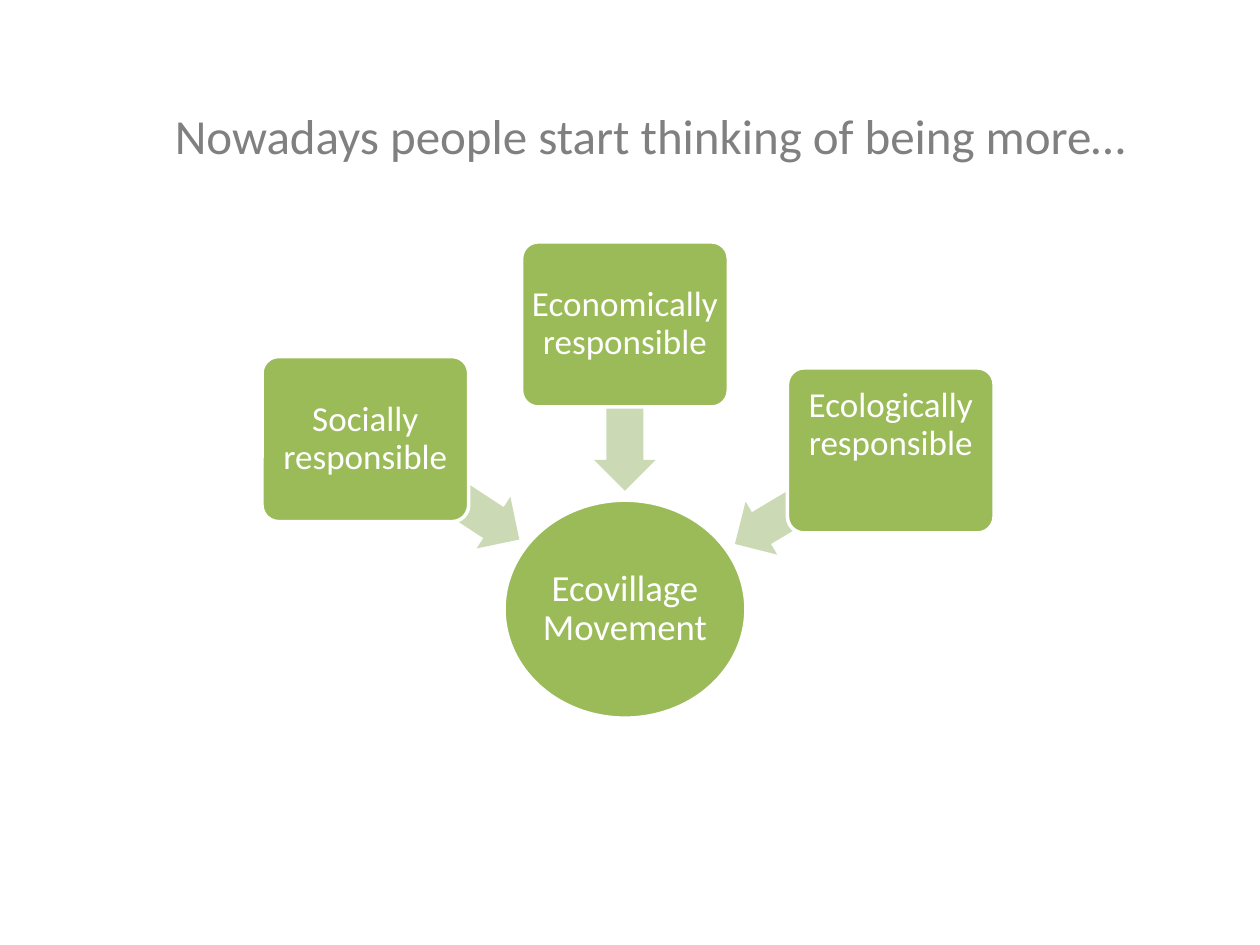
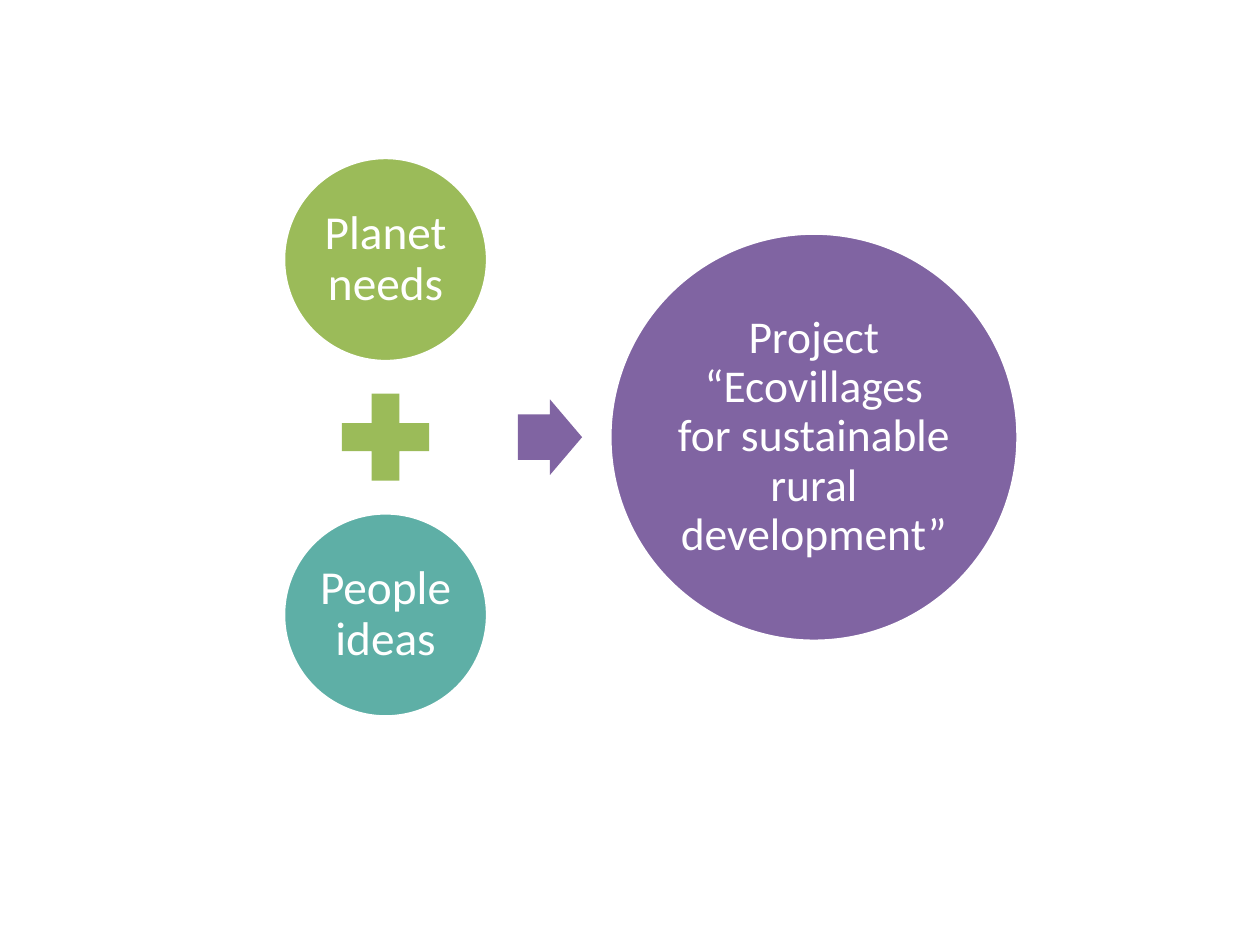
from pptx import Presentation
from pptx import util as u
from pptx.dml.color import RGBColor
from pptx.enum import shapes, text

# Shared scale, font and colours
PX = 9144  # 100 px to the inch
FONT = "Calibri"
GREEN, PALE, TEAL, PURPLE = "9BBB59", "CBDAB5", "5EAFA6", "8064A2"
WHITE, GREY = "FFFFFF", "808080"
KIND = shapes.MSO_SHAPE


def px(n):
    return u.Emu(round(n * PX))


def tint(code):
    return RGBColor.from_string(code)


def write(shape, words, size, color=WHITE, pad=4, low=None, lead=0.9):
    """Centred text; low is a bottom inset that lifts the words."""
    frame = shape.text_frame
    form = {
        "word_wrap": True,
        "vertical_anchor": text.MSO_ANCHOR.MIDDLE,
        "margin_left": px(pad),
        "margin_right": px(pad),
        "margin_top": px(pad),
        "margin_bottom": px(pad if low is None else low),
    }
    for name, value in form.items():
        setattr(frame, name, value)
    para = frame.paragraphs[0]
    para.text = words
    para.alignment = text.PP_ALIGN.CENTER
    para.line_spacing = lead
    for name, value in {"size": u.Pt(size), "name": FONT}.items():
        setattr(para.font, name, value)
    para.font.color.rgb = tint(color)


def draw(slide, kind, box, fill, edge=False, turn=0, adj=()):
    shape = slide.shapes.add_shape(kind, *map(px, box))
    shape.shadow.inherit = False
    shape.fill.solid()
    shape.fill.fore_color.rgb = tint(fill)
    if edge:
        shape.line.color.rgb = tint(WHITE)
        shape.line.width = u.Pt(2)
    else:
        shape.line.fill.background()
    shape.rotation = turn
    for i, value in enumerate(adj):
        shape.adjustments[i] = value
    return shape


def disc(slide, box, fill, words, size, pad=4):
    write(draw(slide, KIND.OVAL, box, fill, edge=True), words, size, pad=pad)


def card(slide, left, top, words, low):
    shape = draw(slide, KIND.ROUNDED_RECTANGLE, (left, top, 164, 131),
                 GREEN, edge=True, adj=(0.1,))
    write(shape, words, 20, pad=2, low=low)


def arrow(slide, kind, box, fill, turn=0):
    draw(slide, kind, box, fill, turn=turn, adj=(0.6, 0.5))


def title(slide, words):
    box = slide.shapes.add_textbox(*map(px, (66, 56, 900, 102)))
    write(box, words, 28, GREY, pad=10, low=5, lead=1)
    box.text_frame.margin_top = px(5)


def causes(slide):
    disc(slide, (400, 397, 192, 173), GREEN, "Ecovillage Movement", 21, pad=1)
    # Each arrow goes under its card: arrow box, turn, card corner, words, low inset
    rows = (
        ((279, 364, 145, 49), 213.2, (208, 283), "Socially responsible", 2),
        ((430, 299, 132, 49), 270, (414, 192), "Economically responsible", 2),
        ((573, 370, 145, 49), 329.1, (625, 292), "Ecologically responsible", 42),
    )
    for box, turn, spot, words, low in rows:
        arrow(slide, KIND.LEFT_ARROW, box, PALE, turn)
        card(slide, *spot, words, low)
    title(slide, "Nowadays people start thinking of being more…")


def project(slide):
    # Two parts of the sum
    parts = ((125, GREEN, "Planet needs"), (407, TEAL, "People ideas"))
    for top, fill, words in parts:
        disc(slide, (225, top, 162, 162), fill, words, 27)
    draw(slide, KIND.MATH_PLUS, (259, 300, 94, 94), GREEN)
    # Outcome
    arrow(slide, KIND.RIGHT_ARROW, (411, 317, 51, 60), PURPLE)
    disc(slide, (484, 185, 324, 324), PURPLE,
         "Project “Ecovillages for sustainable rural development”", 26)


def main():
    deck = Presentation()
    deck.slide_width, deck.slide_height = px(1000), px(750)
    for build in (causes, project):
        build(deck.slides.add_slide(deck.slide_layouts[6]))
    deck.save("out.pptx")


if __name__ == "__main__":
    main()
